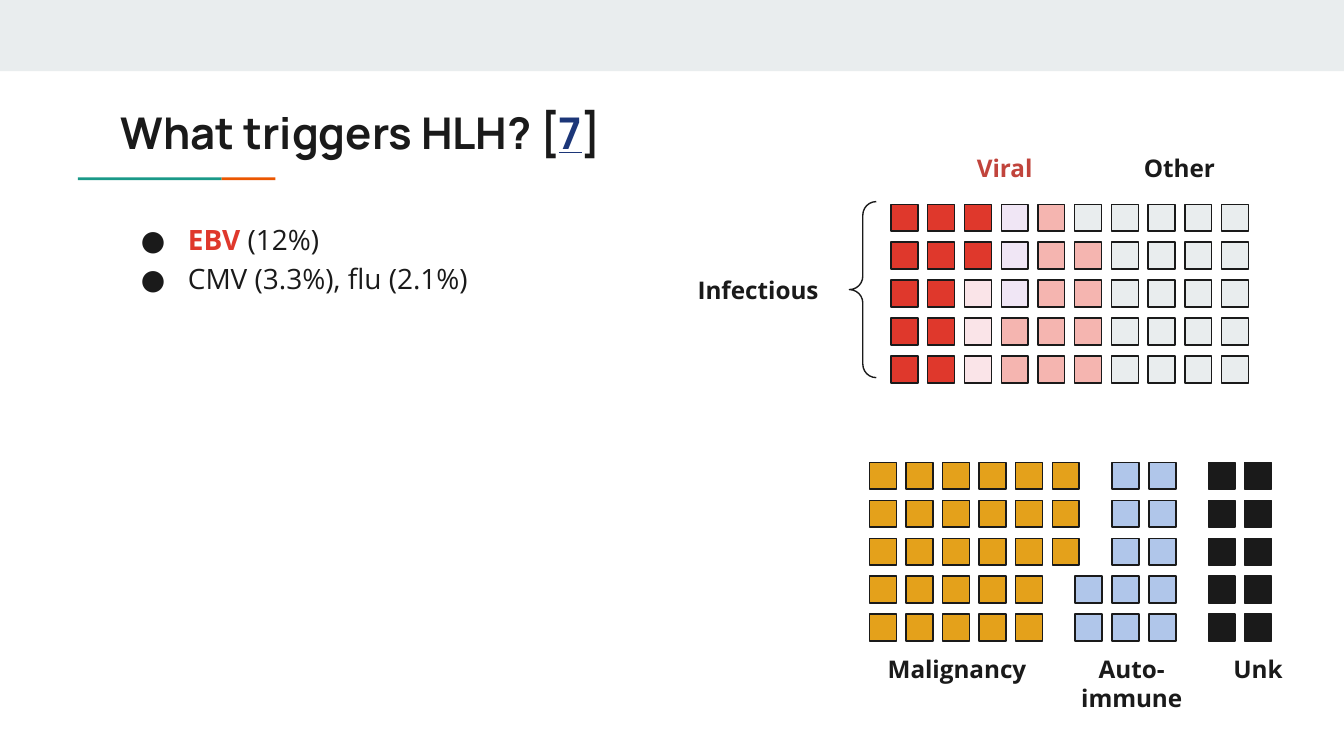
from lxml.etree import SubElement
from pptx import Presentation
from pptx.dml.color import RGBColor
from pptx.enum.shapes import MSO_SHAPE as SHAPE
from pptx.enum.text import PP_ALIGN as ALIGN
from pptx.oxml.ns import qn
from pptx.util import Inches, Pt

INK = RGBColor(0x1A, 0x1A, 0x1A)
GREY = RGBColor(0xE9, 0xED, 0xEE)
ORANGE = RGBColor(0xEB, 0x56, 0x00)
TEAL = RGBColor(0x1A, 0x99, 0x88)
NAVY = RGBColor(0x1C, 0x36, 0x78)
RED = RGBColor(0xDF, 0x38, 0x2C)
BRICK = RGBColor(0xC1, 0x44, 0x3C)
SALMON = RGBColor(0xF5, 0xB5, 0xB0)
PINK = RGBColor(0xFA, 0xE4, 0xE8)
LILAC = RGBColor(0xF0, 0xE6, 0xF5)
AMBER = RGBColor(0xE4, 0xA1, 0x1B)
BLUE = RGBColor(0xB0, 0xC6, 0xEA)

# One letter per square; a dot leaves the cell empty
CELL_COLORS = {"R": RED, "L": LILAC, "S": SALMON, "P": PINK, "G": GREY,
               "A": AMBER, "B": BLUE, "K": INK}
INFECTIOUS = ["RRRLSGGGGG", "RRRLSSGGGG", "RRPLSSGGGG", "RRPSSSGGGG", "RRPSSSGGGG"]
MALIGNANCY = ["AAAAAA"] * 3 + ["AAAAA."] * 2
AUTOIMMUNE = [".BB"] * 3 + ["BBB"] * 2
UNKNOWN = ["KK"] * 5
CELL = 0.2


def add_shape(slide, kind, x, y, w, h, fill=None, line=None):
    sp = slide.shapes.add_shape(kind, Inches(x), Inches(y), Inches(w), Inches(h))
    sp.shadow.inherit = False
    if fill is None:
        sp.fill.background()
    else:
        sp.fill.solid()
        sp.fill.fore_color.rgb = fill
    if line is None:
        sp.line.fill.background()
    else:
        sp.line.color.rgb = line
        sp.line.width = Pt(0.75)
    return sp


def add_text(slide, x, y, w, h, paragraphs, size=13, font="Open Sans",
             align=ALIGN.LEFT, spacing=None, bullet=None):
    """Each paragraph is a list of (text, colour, bold, underline) runs."""
    box = slide.shapes.add_textbox(Inches(x), Inches(y), Inches(w), Inches(h))
    tf = box.text_frame
    tf.word_wrap = True
    tf.margin_left = tf.margin_right = tf.margin_top = tf.margin_bottom = Inches(0.1)
    for i, runs in enumerate(paragraphs):
        p = tf.add_paragraph() if i else tf.paragraphs[0]
        p.alignment = align
        p.line_spacing = spacing
        if bullet:
            pPr = p._p.get_or_add_pPr()
            pPr.set("marL", str(Inches(0.5)))
            pPr.set("indent", str(Inches(-0.35)))
            color = SubElement(pPr, qn("a:buClr"))
            SubElement(color, qn("a:srgbClr"), val=str(INK))
            SubElement(pPr, qn("a:buFont"), typeface=font)
            SubElement(pPr, qn("a:buChar"), char=bullet)
        for text, color, bold, underline in runs:
            r = p.add_run()
            r.text = text
            r.font.name = font
            r.font.size = Pt(size)
            r.font.bold = bold
            r.font.underline = underline
            r.font.color.rgb = color


def add_label(slide, x, y, w, h, *lines, color=INK):
    add_text(slide, x, y, w, h, [[(line, color, True, False)] for line in lines],
             align=ALIGN.CENTER)


def add_squares(slide, x, y, w, h, rows):
    """Spread the squares evenly over the box."""
    step_x = (w - CELL) / (len(rows[0]) - 1)
    step_y = (h - CELL) / (len(rows) - 1)
    for i, row in enumerate(rows):
        for j, key in enumerate(row):
            if key in CELL_COLORS:
                add_shape(slide, SHAPE.RECTANGLE, x + j * step_x, y + i * step_y,
                          CELL, CELL, CELL_COLORS[key], INK)


def add_header(slide, x, y, w, h):
    # Top band, title and two-colour rule
    add_shape(slide, SHAPE.RECTANGLE, x, y, w, h, GREY)
    add_shape(slide, SHAPE.RECTANGLE, x + 0.58, y + 1.32, 1.07, 0.02, TEAL)
    add_shape(slide, SHAPE.RECTANGLE, x + 1.65, y + 1.32, 0.4, 0.02, ORANGE)
    add_text(slide, x + 0.8, y + 0.69, 8.41, 0.59,
             [[("What triggers HLH? [", INK, True, False),
               ("7", NAVY, True, True),
               ("]", INK, True, False)]], size=23.4, font="Manrope")


def add_viral_list(slide, x, y, w, h):
    add_text(slide, x, y, w, h,
             [[("EBV ", RED, True, False), ("(12%)", INK, False, False)],
              [("CMV (3.3%), flu (2.1%)", INK, False, False)]],
             size=15, spacing=1.15, bullet="●")


def add_infectious(slide, x, y, w, h):
    add_squares(slide, x, y, w, h, INFECTIOUS)
    add_label(slide, x - 1.64, y + 0.43, 1.3, 0.42, "Infectious")
    brace = add_shape(slide, SHAPE.LEFT_BRACE, x - 0.31, y - 0.02, 0.2, 1.31, line=INK)
    brace.adjustments[0] = 0.5
    brace.adjustments[1] = 0.5
    add_label(slide, x + 0.34, y - 0.48, 1.01, 0.42, "Viral", color=BRICK)
    add_label(slide, x + 1.64, y - 0.48, 1.01, 0.42, "Other")


def add_other_triggers(slide, x, y, h):
    add_squares(slide, x, y, 1.56, h, MALIGNANCY)
    add_squares(slide, x + 1.53, y, 0.75, h, AUTOIMMUNE)
    add_squares(slide, x + 2.52, y, 0.47, h, UNKNOWN)
    label_y = y + h
    add_label(slide, x, label_y, 1.3, 0.42, "Malignancy")
    add_label(slide, x + 1.46, label_y, 0.98, 0.64, "Auto-", "immune")
    add_label(slide, x + 2.56, label_y, 0.66, 0.42, "Unk")


def main():
    prs = Presentation()
    # Widescreen, 16 to 9
    prs.slide_width = Inches(10)
    prs.slide_height = prs.slide_width * 9 // 16
    slide = prs.slides.add_slide(prs.slide_layouts[6])
    add_header(slide, 0, 0, 10, 0.53)
    add_viral_list(slide, 0.8, 1.52, 3.47, 2.47)
    add_infectious(slide, 6.63, 1.52, 2.66, 1.33)
    add_other_triggers(slide, 6.47, 3.44, 1.33)
    prs.save("out.pptx")


if __name__ == "__main__":
    main()
